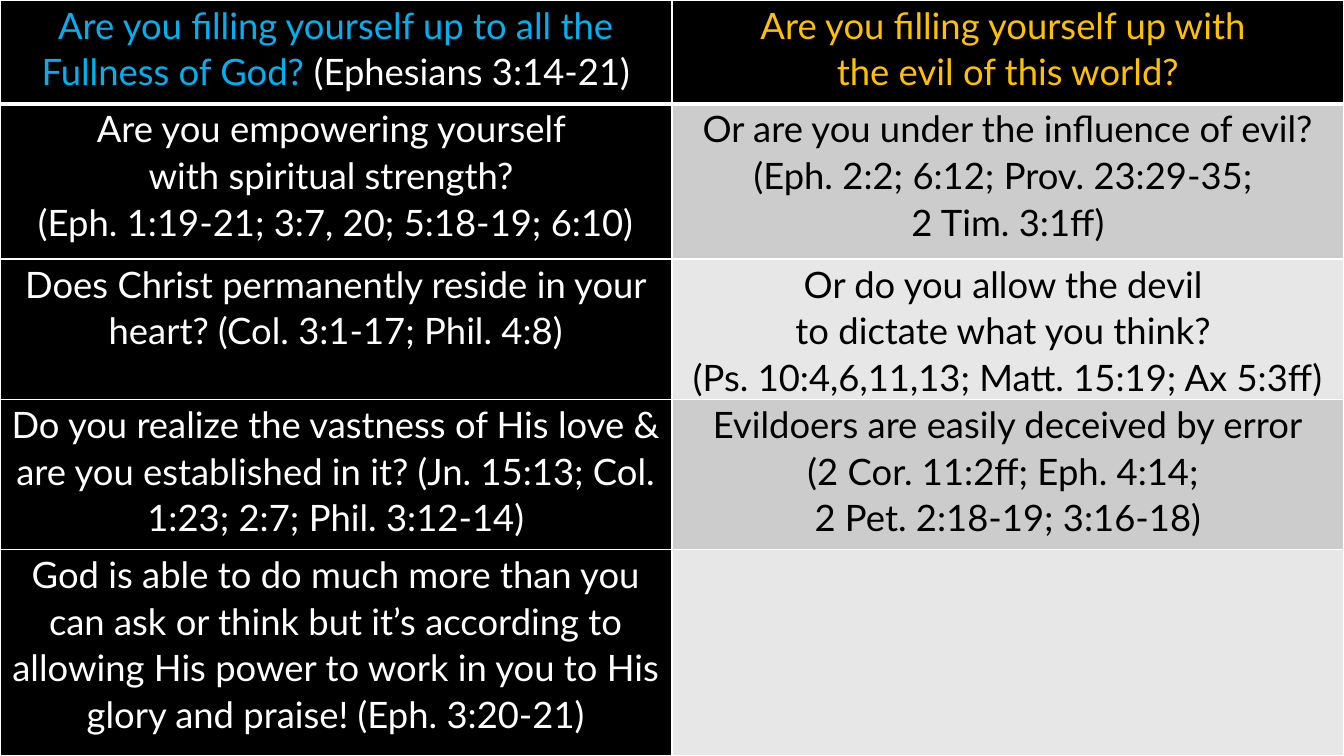
from lxml import etree
from pptx import Presentation
from pptx.dml.color import RGBColor
from pptx.enum.text import PP_ALIGN
from pptx.oxml.ns import qn
from pptx.util import Inches, Pt

BLACK = RGBColor(0x00, 0x00, 0x00)
WHITE = RGBColor(0xFF, 0xFF, 0xFF)
BLUE = RGBColor(0x00, 0xB0, 0xF0)
GOLD = RGBColor(0xFF, 0xC0, 0x00)
DARK_BAND = RGBColor(0xCC, 0xCC, 0xCC)
LIGHT_BAND = RGBColor(0xE7, 0xE7, 0xE7)

WIDTH, HEIGHT = 13.33, 7.5
ROW_HEIGHTS = [1.03, 1.54, 1.39, 1.49, 2.05]

# Each cell is a list of paragraphs; the first row is the header
QUESTIONS = [
    (["Are you filling yourself up to all the Fullness of God? "],
     ["Are you filling yourself up with ", "the evil of this world?"]),
    (["Are you empowering yourself ", "with spiritual strength? ",
      "(Eph. 1:19-21; 3:7, 20; 5:18-19; 6:10)"],
     ["Or are you under the influence of evil? (Eph. 2:2; 6:12; Prov. 23:29-35; ",
      "2 Tim. 3:1ff)"]),
    (["Does Christ permanently reside in your heart? (Col. 3:1-17; Phil. 4:8)"],
     ["Or do you allow the devil ", "to dictate what you think? ",
      "(Ps. 10:4,6,11,13; Matt. 15:19; Ax 5:3ff)"]),
    (["Do you realize the vastness of His love & are you established in it? "
      "(Jn. 15:13; Col. 1:23; 2:7; Phil. 3:12-14)"],
     ["Evildoers are easily deceived by error", "(2 Cor. 11:2ff; Eph. 4:14; ",
      "2 Pet. 2:18-19; 3:16-18)"]),
    (["God is able to do much more than you can ask or think but it’s according to "
      "allowing His power to work in you to His glory and praise! (Eph. 3:20-21)"],
     []),
]
HEADER_REFERENCE = "(Ephesians 3:14-21)"


def set_borders(cell, top, bottom):
    """Draw white lines on all four sides, with widths in points."""
    properties = cell._tc.get_or_add_tcPr()
    sides = [("a:lnL", 1), ("a:lnR", 1), ("a:lnT", top), ("a:lnB", bottom)]
    for position, (side, width) in enumerate(sides):
        line = etree.Element(qn(side), w=str(Pt(width)))
        fill = etree.SubElement(line, qn("a:solidFill"))
        etree.SubElement(fill, qn("a:srgbClr"), val=str(WHITE))
        properties.insert(position, line)


def write_cell(cell, lines, text_color, fill_color):
    cell.fill.solid()
    cell.fill.fore_color.rgb = fill_color
    cell.margin_left = cell.margin_right = Inches(0.07)
    cell.margin_top = cell.margin_bottom = 0
    cell.text = "\n".join(lines)
    for paragraph in cell.text_frame.paragraphs:
        paragraph.alignment = PP_ALIGN.CENTER
        paragraph.line_spacing = 1.07
        paragraph.font.name = "Lato"
        paragraph.font.size = Pt(26)
        paragraph.font.bold = False
        paragraph.font.color.rgb = text_color


def add_questions_table(slide):
    table = slide.shapes.add_table(
        len(QUESTIONS), 2, 0, 0, Inches(WIDTH), Inches(HEIGHT)).table
    for row, height in zip(table.rows, ROW_HEIGHTS):
        row.height = Inches(height)

    for index, (god_lines, evil_lines) in enumerate(QUESTIONS):
        god_cell, evil_cell = table.cell(index, 0), table.cell(index, 1)
        if index == 0:
            god_color, evil_color, evil_fill = BLUE, GOLD, BLACK
        else:
            god_color, evil_color = WHITE, BLACK
            evil_fill = DARK_BAND if index % 2 else LIGHT_BAND
        write_cell(god_cell, god_lines, god_color, BLACK)
        write_cell(evil_cell, evil_lines, evil_color, evil_fill)
        # Thick line between header and body
        for cell in (god_cell, evil_cell):
            set_borders(cell, 3 if index == 1 else 1, 3 if index == 0 else 1)

    # White scripture reference after the blue heading
    reference = table.cell(0, 0).text_frame.paragraphs[0].add_run()
    reference.text = HEADER_REFERENCE
    reference.font.color.rgb = WHITE


def main():
    presentation = Presentation()
    presentation.slide_width = Inches(WIDTH)
    presentation.slide_height = Inches(HEIGHT)
    slide = presentation.slides.add_slide(presentation.slide_layouts[6])
    slide.background.fill.solid()
    slide.background.fill.fore_color.rgb = BLACK
    add_questions_table(slide)
    presentation.save("out.pptx")


if __name__ == "__main__":
    main()
